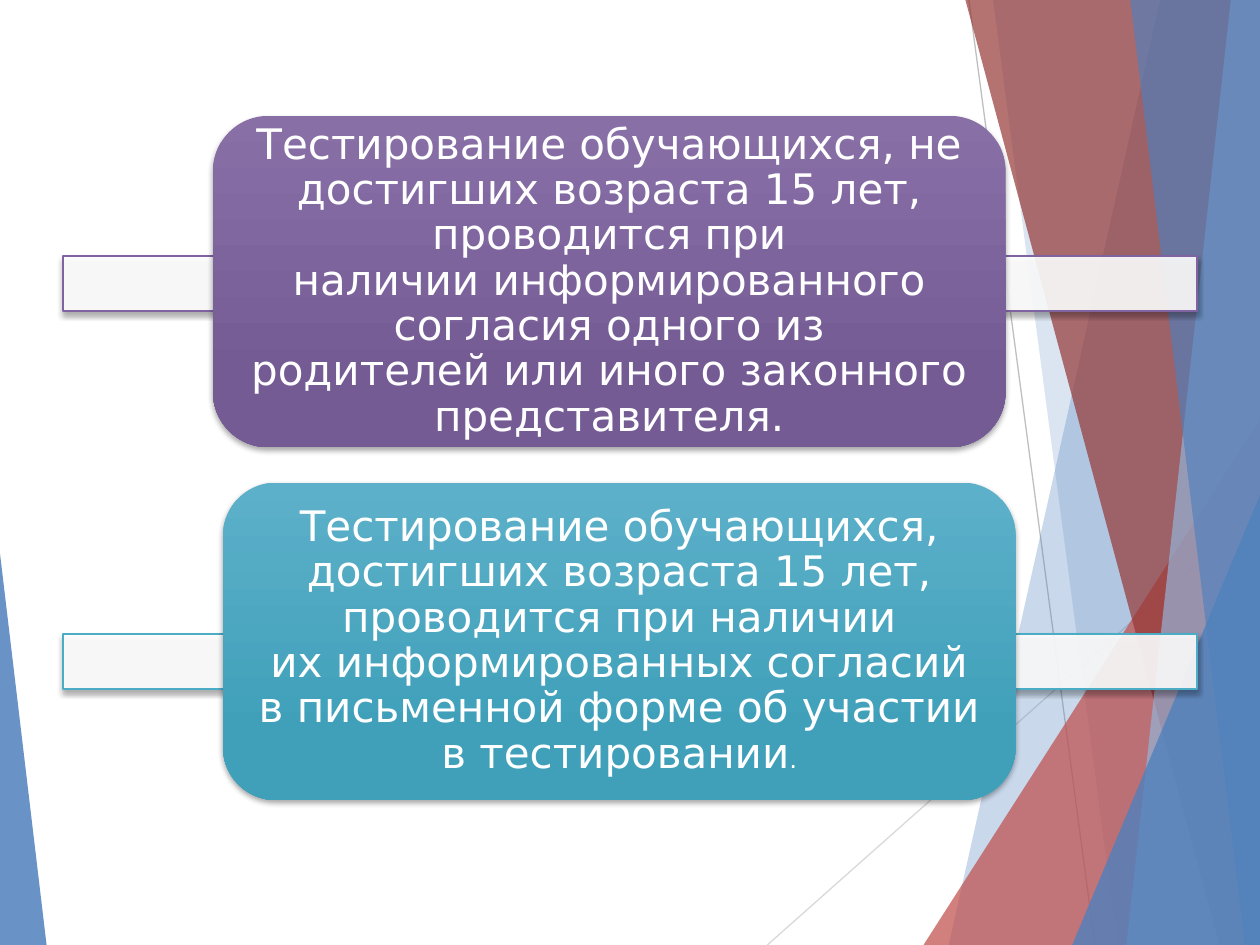
"""Build a slide with two consent rules over a faceted backdrop."""
import pptx
import pptx.dml.color
import pptx.enum.shapes
import pptx.enum.text
import pptx.oxml
import pptx.oxml.ns
import pptx.util

PX = 9144
KIND = pptx.enum.shapes.MSO_SHAPE
HUES = {
    "blue": "4F81BD", "sky": "95B3D7", "red": "C0504D", "wine": "953735",
    "grey": "BFBFBF", "pale": "D9D9D9", "white": "FFFFFF", "black": "000000",
    "plum": "8064A2", "plum_top": "8870A7", "plum_end": "755B94",
    "teal": "4BACC6", "teal_top": "5DB0C9", "teal_end": "40A0BA",
}
LINES = [((769, 0), (869, 750), "grey"), ((1000, 403), (609, 750), "pale")]
BANDS = [
    (921, 753, "blue", 30), (788, 887, "blue", 20), (766, 968, "wine", 70),
    (977, 894, "sky", 70), (897, 988, "blue", 65),
]
PEAKS = {
    "red": ((733, 333, 267, 417), 1, "red", 72),
    "right": ((851, 393, 149, 357), 1, "blue", 80),
    "left": ((0, 439, 37, 311), 0, "blue", 85),
}
TIE = "~"
RULES = [
    ("plum", 203, (169, 92, 629, 263), [
        ("Тестирование обучающихся,~не достигших возраста 15 лет, "
         "проводится при наличии~информированного согласия одного из "
         "родителей~или иного законного представителя.", 24)]),
    ("teal", 503, (177, 383, 629, 252), [
        ("Тестирование обучающихся, достигших возраста~15 лет, "
         "проводится при наличии их~информированных~согласий в "
         "письменной форме~об участии в тестировании", 24), (".", 14)]),
]


def size(px):
    """Turn px into EMU."""
    return pptx.util.Emu(px * PX)


def hue(name):
    """Look up a colour."""
    return pptx.dml.color.RGBColor.from_string(HUES[name])


def put(thing, vals):
    """Set each format value on a thing."""
    for key, val in vals.items():
        setattr(thing, key, val)


def paint(shape, name, alpha):
    """Give a shape a see-through fill and no line or shadow."""
    shape.fill.solid()
    shape.fill.fore_color.rgb = hue(name)
    shape.line.fill.background()
    shape.shadow.inherit = False
    tone = shape._element.spPr.find(pptx.oxml.ns.qn("a:solidFill"))[0]
    tone.append(pptx.oxml.parse_xml(
        f'<a:alpha {pptx.oxml.ns.nsdecls("a")} val="{alpha * 1000}"/>'))


def shade(shape):
    """Cast a soft shadow below a shape."""
    shape.shadow.inherit = False
    shape._element.spPr.find(pptx.oxml.ns.qn("a:effectLst")).append(
        pptx.oxml.parse_xml(
            f'<a:outerShdw {pptx.oxml.ns.nsdecls("a")} blurRad="38100" '
            'dist="25400" dir="5400000" rotWithShape="0">'
            f'<a:srgbClr val="{HUES["black"]}"><a:alpha val="35000"/>'
            '</a:srgbClr></a:outerShdw>'))


def add(slide, kind, box):
    """Add a preset shape in a px box."""
    return slide.shapes.add_shape(kind, *map(size, box))


def line(slide, start, end, name):
    """Add a thin line."""
    wire = slide.shapes.add_connector(
        pptx.enum.shapes.MSO_CONNECTOR.STRAIGHT, *map(size, start + end))
    wire.line.color.rgb = hue(name)
    wire.line.width = pptx.util.Pt(0.75)
    wire._element.spPr.append(pptx.oxml.parse_xml(
        f'<a:effectLst {pptx.oxml.ns.nsdecls("a")}/>'))


def band(slide, top, base, name, alpha):
    """Add a slanted band that runs to the right edge."""
    pen = slide.shapes.build_freeform(top, -1, PX)
    pen.add_line_segments([(1000, -1), (1000, 750), (base, 750)])
    paint(pen.convert_to_shape(), name, alpha)


def peak(slide, box, tip, name, alpha):
    """Add a triangle with its tip at one side."""
    shape = add(slide, KIND.ISOSCELES_TRIANGLE, box)
    shape.adjustments[0] = tip
    paint(shape, name, alpha)


def bar(slide, top, name):
    """Add the framed bar behind a card."""
    shape = add(slide, KIND.RECTANGLE, (50, top, 900, 44))
    paint(shape, "white", 90)
    shape.line.color.rgb = hue(name)
    shape.line.width = pptx.util.Pt(1)
    shade(shape)


def card(slide, box, name, runs):
    """Add a rounded card with a gradient and centred text."""
    shape = add(slide, KIND.ROUNDED_RECTANGLE, box)
    shape.fill.gradient()
    shape.fill.gradient_angle = 270
    ends = ((0, "_top"), (0.78, "_end"))
    for stop, (place, end) in zip(shape.fill.gradient_stops, ends):
        stop.position = place
        stop.color.rgb = hue(name + end)
    shape.line.fill.background()
    shade(shape)
    frame = shape.text_frame
    put(frame, {
        "word_wrap": True, "margin_left": size(11), "margin_right": size(11),
        "margin_top": 0, "margin_bottom": 0,
        "vertical_anchor": pptx.enum.text.MSO_ANCHOR.MIDDLE})
    para = frame.paragraphs[0]
    put(para, {"alignment": pptx.enum.text.PP_ALIGN.CENTER,
               "line_spacing": 0.9})
    for text, points in runs:
        run = para.add_run()
        run.text = text.replace(TIE, chr(160))
        put(run.font, {"name": "DejaVu Sans", "size": pptx.util.Pt(points)})
        run.font.color.rgb = hue("white")


def main():
    """Build and save the slide."""
    deck = pptx.Presentation()
    put(deck, {"slide_width": size(1000), "slide_height": size(750)})
    slide = deck.slides.add_slide(deck.slide_layouts[6])
    for item in LINES:
        line(slide, *item)
    for item in BANDS[:2]:
        band(slide, *item)
    peak(slide, *PEAKS["red"])
    for item in BANDS[2:]:
        band(slide, *item)
    for side in ("right", "left"):
        peak(slide, *PEAKS[side])
    for name, top, box, runs in RULES:
        bar(slide, top, name)
        card(slide, box, name, runs)
    deck.save("out.pptx")


if __name__ == "__main__":
    main()
